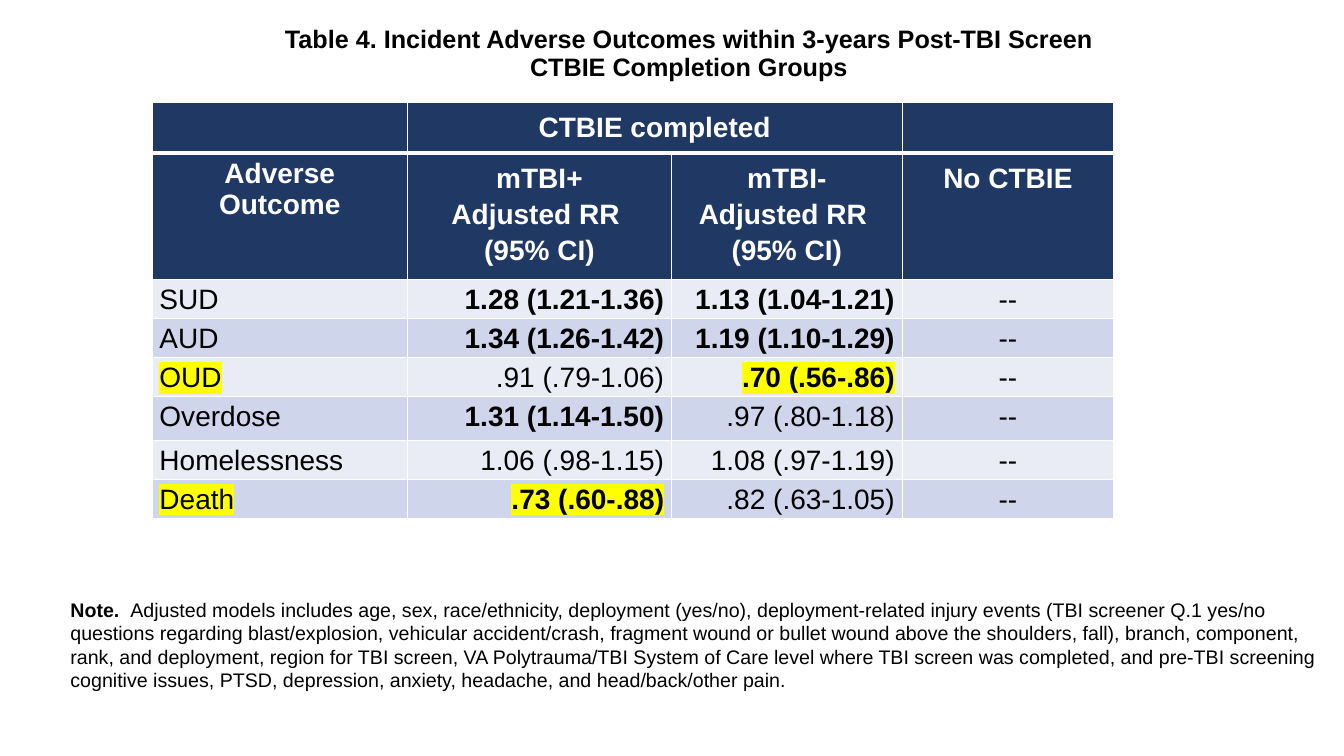
from lxml.etree import SubElement
from pptx import Presentation
from pptx.dml.color import RGBColor
from pptx.enum.text import MSO_ANCHOR, MSO_AUTO_SIZE, PP_ALIGN
from pptx.oxml.ns import qn
from pptx.util import Pt

NAVY, WHITE, BLACK, YELLOW = "203864", "FFFFFF", "000000", "FFFF00"
BANDS = ("E9EBF5", "CFD5EA")

COLUMN_WIDTHS = (182.3, 188.7, 164.7, 151.2)
ROW_HEIGHTS = (36, 64, 28, 28, 28, 31, 28, 28)
HEADINGS = (
    ["Adverse Outcome"],
    ["mTBI+\vAdjusted RR ", "(95% CI)"],
    ["mTBI-\vAdjusted RR ", "(95% CI)"],
    ["No CTBIE"],
)
# Markers: * bold, ! highlighted
OUTCOMES = (
    ("SUD", "*1.28 (1.21-1.36)", "*1.13 (1.04-1.21)", "--"),
    ("AUD", "*1.34 (1.26-1.42)", "*1.19 (1.10-1.29)", "--"),
    ("!OUD", ".91 (.79-1.06)", "!*.70 (.56-.86)", "--"),
    ("Overdose", "*1.31 (1.14-1.50)", ".97 (.80-1.18)", "--"),
    ("Homelessness", "1.06 (.98-1.15)", "1.08 (.97-1.19)", "--"),
    ("!Death", "!*.73 (.60-.88)", ".82 (.63-1.05)", "--"),
)
ALIGNMENTS = (PP_ALIGN.LEFT, PP_ALIGN.RIGHT, PP_ALIGN.RIGHT, PP_ALIGN.CENTER)
NOTE = (
    "Adjusted models includes age, sex, race/ethnicity, deployment (yes/no), "
    "deployment-related injury events (TBI screener Q.1 yes/no questions regarding "
    "blast/explosion, vehicular accident/crash, fragment wound or bullet wound above "
    "the shoulders, fall), branch, component, rank, and deployment, region for TBI "
    "screen, VA Polytrauma/TBI System of Care level where TBI screen was completed, "
    "and pre-TBI screening cognitive issues, PTSD, depression, anxiety, headache, "
    "and head/back/other pain."
)


def colour(value):
    return RGBColor.from_string(value)


def add_span(para, text, size, bold=False, ink=BLACK, highlight=None):
    """Add text run by run, with a line break at each vertical tab."""
    for index, line in enumerate(text.split("\v")):
        if index:
            para.add_line_break()
        span = para.add_run()
        span.text = line
        span.font.size, span.font.bold = Pt(size), bold
        span.font.color.rgb = colour(ink)
        if highlight:
            marker = SubElement(span.font._element, qn("a:highlight"))
            SubElement(marker, qn("a:srgbClr"), val=highlight)
        span.font.name = "Arial"


def set_borders(cell, bottom):
    properties = cell._tc.get_or_add_tcPr()
    widths = {"lnL": 1, "lnR": 1, "lnT": 1, "lnB": bottom}
    for index, (side, width) in enumerate(widths.items()):
        line = SubElement(properties, qn("a:" + side), w=str(Pt(width)))
        fill = SubElement(line, qn("a:solidFill"))
        SubElement(fill, qn("a:srgbClr"), val=WHITE)
        properties.insert(index, line)


def fill_cell(cell, lines, align, spacing=1.15, **style):
    for index, line in enumerate(lines):
        frame = cell.text_frame
        para = frame.add_paragraph() if index else frame.paragraphs[0]
        para.alignment, para.line_spacing = align, spacing
        add_span(para, line, 20, **style)


def add_title(page, left, top, width, height):
    box = page.shapes.title
    box.left, box.top, box.width, box.height = map(Pt, (left, top, width, height))
    frame = box.text_frame
    frame.auto_size = MSO_AUTO_SIZE.NONE
    frame.vertical_anchor = MSO_ANCHOR.MIDDLE
    frame.margin_bottom = Pt(26)
    para = frame.paragraphs[0]
    para.alignment, para.line_spacing = PP_ALIGN.CENTER, 0.9
    add_span(para, "Table 4. Incident Adverse Outcomes within 3-years Post-TBI Screen"
             "\vCTBIE Completion Groups", 18, bold=True)


def add_outcome_table(page, left, top):
    box = page.shapes.add_table(
        len(ROW_HEIGHTS), len(COLUMN_WIDTHS), Pt(left), Pt(top),
        Pt(sum(COLUMN_WIDTHS)), Pt(sum(ROW_HEIGHTS)))
    table = box.table
    table.horz_banding = False
    for column, width in zip(table.columns, COLUMN_WIDTHS):
        column.width = Pt(width)

    # Fills and borders
    for number, (row, height) in enumerate(zip(table.rows, ROW_HEIGHTS)):
        row.height = Pt(height)
        for cell in row.cells:
            cell.fill.solid()
            cell.fill.fore_color.rgb = colour(NAVY if number < 2 else BANDS[number % 2])
            set_borders(cell, bottom=1 if number else 3)

    # Header rows
    header = {"align": PP_ALIGN.CENTER, "bold": True, "ink": WHITE}
    table.cell(0, 1).merge(table.cell(0, 2))
    fill_cell(table.cell(0, 1), ["CTBIE completed"], **header)
    for number, lines in enumerate(HEADINGS):
        fill_cell(table.cell(1, number), lines, spacing=1.15 if number else 1.0, **header)

    # Outcome rows
    for number, outcome in enumerate(OUTCOMES, start=2):
        for cell, text, align in zip(table.rows[number].cells, outcome, ALIGNMENTS):
            cell.margin_left = cell.margin_right = Pt(5.2)
            cell.margin_top = cell.margin_bottom = Pt(0)
            fill_cell(cell, [text.lstrip("!*")], align, bold="*" in text,
                      highlight=YELLOW if "!" in text else None)


def add_note(page, left, top, width, height):
    box = page.shapes.add_textbox(*map(Pt, (left, top, width, height)))
    frame = box.text_frame
    frame.word_wrap = True
    frame.auto_size = MSO_AUTO_SIZE.SHAPE_TO_FIT_TEXT
    para = frame.paragraphs[0]
    add_span(para, "Note.  ", 14, bold=True)
    add_span(para, NOTE, 14)


def main():
    deck = Presentation()
    deck.slide_width, deck.slide_height = Pt(960), Pt(540)
    page = deck.slides.add_slide(deck.slide_layouts[5])
    add_title(page, 43.2, 29.5, 897.8, 41)
    add_note(page, 43.2, 423.4, 914.4, 74.9)
    add_outcome_table(page, 108.7, 73.4)
    deck.save("out.pptx")


if __name__ == "__main__":
    main()
